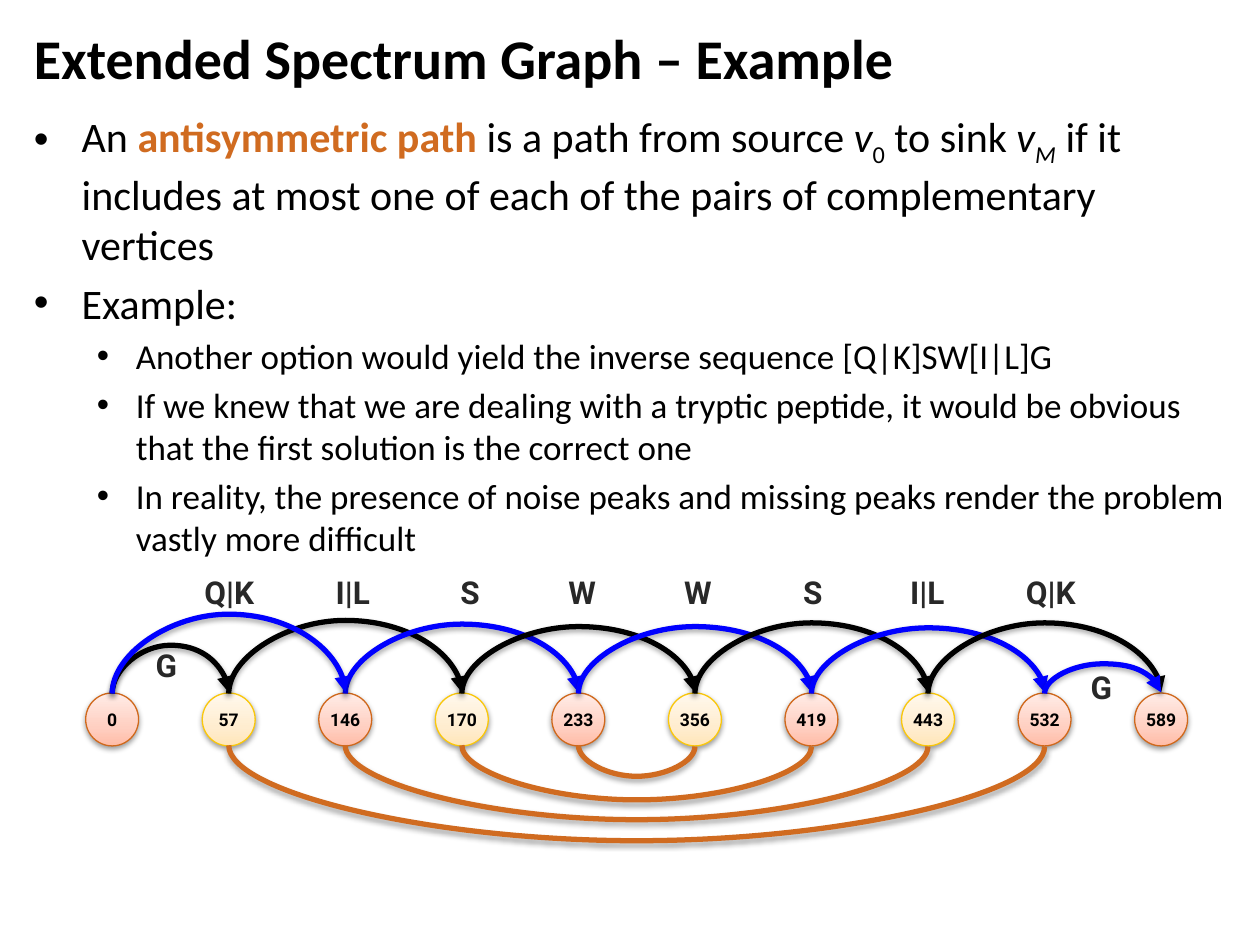
import copy
import pptx
import pptx.util
import pptx.dml.color
import pptx.enum.shapes
import pptx.enum.text
import pptx.oxml.ns
from lxml import etree

Inches, Pt = pptx.util.Inches, pptx.util.Pt
RGB = pptx.dml.color.RGBColor
ALIGN = pptx.enum.text.PP_ALIGN
MIDDLE = pptx.enum.text.MSO_ANCHOR.MIDDLE
qn = pptx.oxml.ns.qn

BLACK = RGB(0, 0, 0)
BLUE = RGB(0, 0, 255)
GREY = RGB(0x28, 0x28, 0x28)
ORANGE = RGB(0xD0, 0x6B, 0x20)
# Node styles: outline, then gradient colours from bottom to top
RED = (RGB(0xD0, 0x68, 0x1B),
       (RGB(0xFF, 0xBC, 0xA7), RGB(0xFF, 0xCF, 0xC1), RGB(0xFF, 0xEC, 0xE7)))
GOLD = (RGB(0xFA, 0xC7, 0x0A),
        (RGB(0xFF, 0xE6, 0xBA), RGB(0xFF, 0xED, 0xCF), RGB(0xFF, 0xF8, 0xED)))
STOPS = (0, 0.35, 1)

TITLE = "Extended Spectrum Graph – Example"
# Each bullet: level, then runs of (text, marks): k key term, i italic, s subscript
BULLETS = [
    (0, [("An ", ""), ("antisymmetric path ", "k"),
         ("is a path from source ", ""), ("v", "i"), ("0", "s"),
         (" to sink ", ""), ("v", "i"), ("M", "is"),
         (" if it includes at most one of each of the pairs of "
          "complementary vertices", "")]),
    (0, [("Example:", "")]),
    (1, [("Another option would yield the inverse sequence "
          "[Q|K]SW[I|L]G", "")]),
    (1, [("If we knew that we are dealing with a tryptic peptide, it would be "
          "obvious that the first solution is the correct one", "")]),
    (1, [("In reality, the presence of noise peaks and missing peaks render "
          "the problem vastly more difficult", "")]),
]
LEVELS = [(24, 0.38, 0.38), (20, 0.81, 0.31)]  # size, margin, hanging

MASSES = [0, 57, 146, 170, 233, 356, 419, 443, 532, 589]
# Arcs: first node, last node, height, colour
STEPS = [
    (0, 1, 0.39, BLACK), (1, 3, 0.59, BLACK), (2, 4, 0.56, BLUE),
    (3, 5, 0.54, BLACK), (0, 2, 0.64, BLUE), (4, 6, 0.54, BLUE),
    (5, 7, 0.57, BLACK), (6, 8, 0.53, BLUE), (7, 9, 0.57, BLACK),
    (8, 9, 0.24, BLUE),
]
PAIRS = [(1, 8, 0.77), (2, 7, 0.6), (3, 6, 0.44), (4, 5, 0.25)]
# Labels: text, centre, top, width
LABELS = [
    ("G", 1.32, 5.08, 0.37), ("Q|K", 1.82, 4.5, 0.69), ("I|L", 2.8, 4.5, 0.57),
    ("S", 3.72, 4.5, 0.33), ("W", 4.62, 4.5, 0.43), ("W", 5.54, 4.5, 0.43),
    ("S", 6.44, 4.5, 0.33), ("I|L", 7.36, 4.5, 0.57), ("Q|K", 8.34, 4.5, 0.69),
    ("G", 8.74, 5.25, 0.37),
]
LEFT, PITCH, SIZE, TOP = 0.68, 0.925, 0.42, 5.5
THIN = 0.01  # height difference between the two ends of an arc


def add_run(para, text, size, font, color, bold=False):
    run = para.add_run()
    run.text = text
    run.font.size, run.font.name, run.font.bold = Pt(size), font, bold
    run.font.color.rgb = color
    return run


def add_box(slide, x, y, w, h, wrap=True):
    box = slide.shapes.add_textbox(Inches(x), Inches(y), Inches(w), Inches(h))
    box.text_frame.word_wrap = wrap
    return box.text_frame


def sub(parent, tag, **attrs):
    return etree.SubElement(parent, qn(tag), **attrs)


def shade(shape, alpha, dist):
    """Give a soft shadow below; call it after the line is set."""
    props = shape._element.spPr
    for old in props.findall(qn("a:effectLst")):
        props.remove(old)
    drop = sub(sub(props, "a:effectLst"), "a:outerShdw", blurRad="40000",
               dist=str(dist), dir="5400000", rotWithShape="0")
    sub(sub(drop, "a:srgbClr", val="000000"), "a:alpha", val=str(alpha * 1000))


def add_bullet(para, level, runs):
    size, margin, hang = LEVELS[level]
    para.level = level
    para.space_before = Pt(0.2 * size)
    props = para._p.get_or_add_pPr()
    props.set("marL", str(Inches(margin)))
    props.set("indent", str(-Inches(hang)))
    sub(props, "a:buFont", typeface="Arial")
    sub(props, "a:buChar", char="•")
    for text, marks in runs:
        key = "k" in marks
        run = add_run(para, text, size, "Calibri", ORANGE if key else BLACK, key)
        run.font.italic = "i" in marks
        if "s" in marks:
            run.font._element.set("baseline", "-25000")


def add_node(slide, index, mass):
    # Outer nodes and every second one are red
    edge, tones = RED if index % 2 == 0 or index == len(MASSES) - 1 else GOLD
    node = slide.shapes.add_shape(
        pptx.enum.shapes.MSO_SHAPE.OVAL, Inches(LEFT + index * PITCH),
        Inches(TOP), Inches(SIZE), Inches(SIZE))
    node.shadow.inherit = False
    node.fill.gradient()
    node.fill.gradient_angle = 90
    stops = node._element.spPr.find(".//" + qn("a:gsLst"))
    stops.append(copy.deepcopy(stops[-1]))
    for stop, place, tone in zip(node.fill.gradient_stops, STOPS, tones):
        stop.position, stop.color.rgb = place, tone
    node.line.color.rgb, node.line.width = edge, Pt(0.75)
    shade(node, 38, 20000)
    frame = node.text_frame
    frame.margin_left = frame.margin_right = 0
    frame.margin_top = frame.margin_bottom = 0
    frame.vertical_anchor = MIDDLE
    frame.word_wrap = True
    para = frame.paragraphs[0]
    para.alignment = ALIGN.CENTER
    add_run(para, str(mass), 10, "Roboto", BLACK, True)


def add_arc(slide, first, last, rise, color, above):
    """Join two nodes by a turned curved connector, over or under the row."""
    span = (last - first) * PITCH
    mid = LEFT + SIZE / 2 + (first + last) / 2 * PITCH
    edge = TOP if above else TOP + SIZE
    x, y = mid - THIN / 2, edge - span / 2
    arc = slide.shapes.add_connector(
        pptx.enum.shapes.MSO_CONNECTOR.CURVE,
        Inches(x), Inches(y), Inches(x + THIN), Inches(y + span))
    props = arc._element.spPr
    frame = props.find(qn("a:xfrm"))
    frame.set("rot", "5400000" if above else "16200000")
    frame.set("flipH", "1")
    if above:
        frame.set("flipV", "1")
    sub(props.find(".//" + qn("a:avLst")), "a:gd", name="adj1",
        fmla=f"val {round(rise / THIN * 100000)}")
    arc.line.color.rgb, arc.line.width = color, Pt(3)
    if above:
        sub(arc.line._get_or_add_ln(), "a:tailEnd", type="triangle")
    shade(arc, 35, 23000)


def main():
    deck = pptx.Presentation()
    deck.slide_width, deck.slide_height = Inches(10), Inches(7.5)
    slide = deck.slides.add_slide(deck.slide_layouts[6])

    head = add_box(slide, 0.17, 0.08, 7.33, 0.75)
    head.vertical_anchor = MIDDLE
    add_run(head.paragraphs[0], TITLE, 32, "Calibri", BLACK, True)

    body = add_box(slide, 0.17, 0.83, 9.66, 3.42)
    for i, (level, runs) in enumerate(BULLETS):
        para = body.add_paragraph() if i else body.paragraphs[0]
        add_bullet(para, level, runs)

    for i, mass in enumerate(MASSES):
        add_node(slide, i, mass)
    for first, last, rise, color in STEPS:
        add_arc(slide, first, last, rise, color, True)
    for first, last, drop in PAIRS:
        add_arc(slide, first, last, drop, ORANGE, False)
    for text, mid, top, width in LABELS:
        para = add_box(slide, mid - width / 2, top, width, 0.4, False).paragraphs[0]
        para.alignment = ALIGN.RIGHT if text == "G" else ALIGN.CENTER
        add_run(para, text, 18, "Roboto", GREY, True)

    deck.save("out.pptx")


if __name__ == "__main__":
    main()
